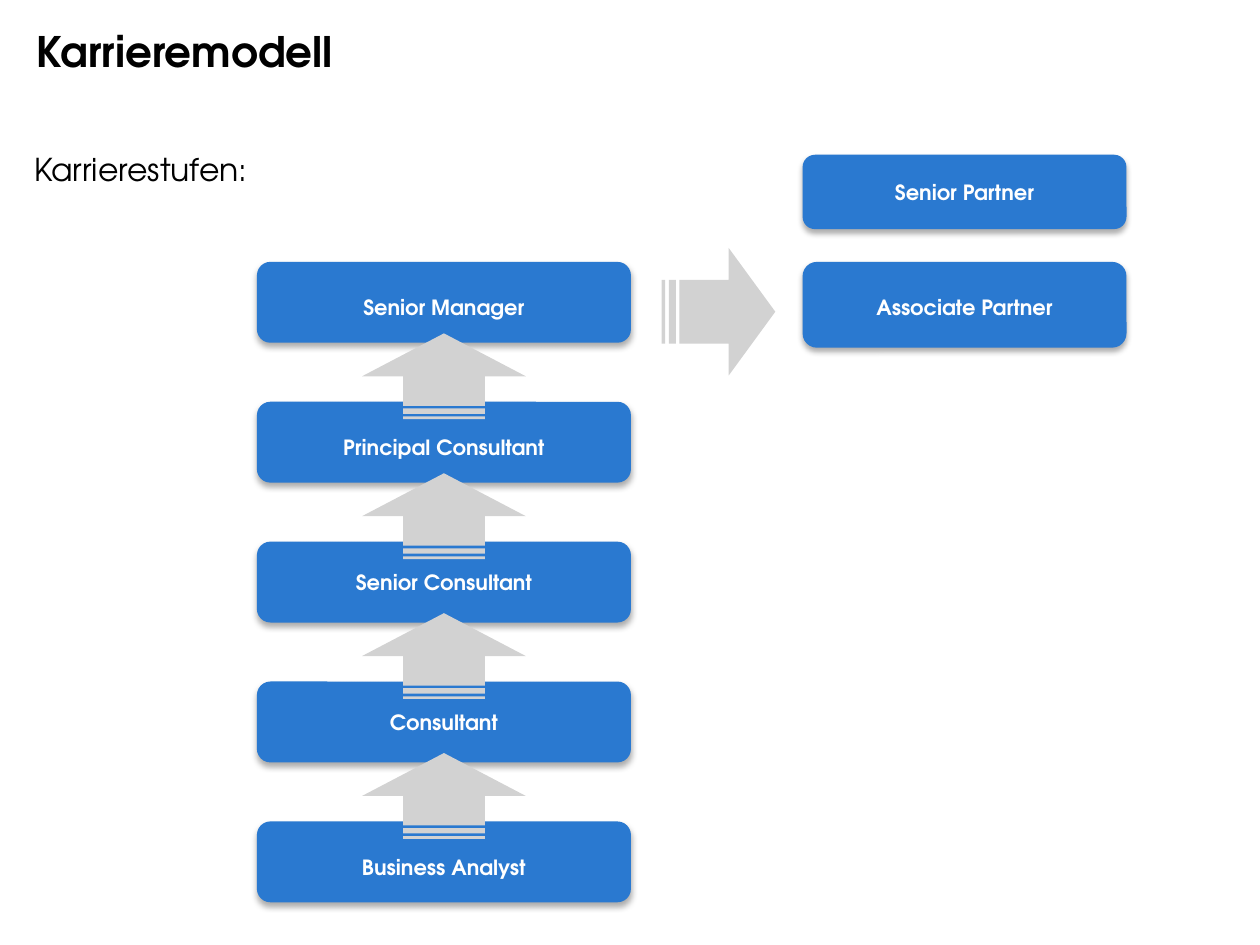
import collections
import dataclasses

import lxml.etree
import pptx
import pptx.dml.color
import pptx.enum.shapes
import pptx.enum.text
import pptx.oxml.ns
import pptx.util

Cm = pptx.util.Cm
Shapes = pptx.enum.shapes.MSO_SHAPE
Align = pptx.enum.text.PP_ALIGN
Anchor = pptx.enum.text.MSO_ANCHOR
Box = collections.namedtuple("Box", "left top width height")


@dataclasses.dataclass(frozen=True)
class Theme:
    """Fonts, colours and type sizes of the slide."""
    font: str = "TeX Gyre Adventor"
    ink: str = "000000"
    level: str = "2A79D0"
    label: str = "FFFFFF"
    arrow: str = "D2D2D2"
    title_size: int = 24
    heading_size: int = 18
    label_size: int = 12


THEME = Theme()
LEVELS = [
    ("Senior Manager", 0.1),
    ("Principal Consultant", 0.1),
    ("Senior Consultant", 0),
    ("Consultant", 0),
    ("Business Analyst", 0.1),
]


def lengths(box):
    """Return the four sides of a box as lengths."""
    return [Cm(value) for value in box]


def write_text(shape, text, size, color=THEME.ink, bold=False,
               align=Align.LEFT, anchor=Anchor.TOP, inset_top=0):
    """Write one formatted paragraph into a shape."""
    frame = shape.text_frame
    frame.word_wrap = True
    frame.auto_size = pptx.enum.text.MSO_AUTO_SIZE.NONE
    frame.vertical_anchor = anchor
    frame.margin_left = frame.margin_right = frame.margin_bottom = 0
    frame.margin_top = Cm(inset_top)
    paragraph = frame.paragraphs[0]
    paragraph.alignment = align
    run = paragraph.add_run()
    run.text = text
    run.font.name = THEME.font
    run.font.size = pptx.util.Pt(size)
    run.font.bold = bold
    run.font.color.rgb = pptx.dml.color.RGBColor.from_string(color)


def add_filled_shape(slide, kind, box, color):
    """Add a preset shape with a plain fill, no line and no shadow."""
    shape = slide.shapes.add_shape(kind, *lengths(box))
    shape.shadow.inherit = False
    shape.fill.solid()
    shape.fill.fore_color.rgb = pptx.dml.color.RGBColor.from_string(color)
    shape.line.fill.background()
    return shape


def add_drop_shadow(shape):
    """Give a shape a soft shadow falling straight down."""
    qn = pptx.oxml.ns.qn
    effects = shape.element.spPr.find(qn("a:effectLst"))
    shadow = lxml.etree.SubElement(
        effects, qn("a:outerShdw"), blurRad=str(pptx.util.Pt(3.5)),
        dist=str(pptx.util.Pt(2.2)), dir="5400000", rotWithShape="0")
    color = lxml.etree.SubElement(shadow, qn("a:srgbClr"), val="000000")
    lxml.etree.SubElement(color, qn("a:alpha"), val="32000")


def add_level(slide, box, text, label_drop=0):
    """Add one career level, its label lowered from the middle by label_drop."""
    shape = add_filled_shape(slide, Shapes.ROUNDED_RECTANGLE, box, THEME.level)
    add_drop_shadow(shape)
    write_text(shape, text, THEME.label_size, THEME.label, bold=True,
               align=Align.CENTER, anchor=Anchor.MIDDLE, inset_top=2 * label_drop)


def add_headings(slide, box):
    """Place the title and the heading below it."""
    title = slide.shapes.title
    title.left, title.top, title.width, title.height = lengths(
        Box(box.left + 0.05, box.top, 19.86, 2.11))
    write_text(title, "Karrieremodell", THEME.title_size, bold=True,
               anchor=Anchor.MIDDLE)
    heading = slide.shapes.add_textbox(
        *lengths(Box(box.left, box.top + 3.05, box.width, box.height - 3.05)))
    write_text(heading, "Karrierestufen:", THEME.heading_size)


def add_ladder(slide, box):
    """Stack the levels in the box and link them with upward arrows."""
    level_height = 1.63
    step = (box.height - level_height) / (len(LEVELS) - 1)
    for index, (text, label_drop) in enumerate(LEVELS):
        level = Box(box.left, box.top + index * step, box.width, level_height)
        add_level(slide, level, text, label_drop)

    length, breadth = 1.73, 3.3
    middle = box.left + box.width / 2
    first_gap = box.top + (step + level_height) / 2 + 0.08
    for index in reversed(range(len(LEVELS) - 1)):
        center = first_gap + index * step
        arrow_box = Box(middle - length / 2, center - breadth / 2, length, breadth)
        arrow = add_filled_shape(slide, Shapes.STRIPED_RIGHT_ARROW, arrow_box, THEME.arrow)
        arrow.rotation = 270


def add_partner_track(slide, box):
    """Place the arrow to the partner levels and the two levels."""
    arrow = add_filled_shape(slide, Shapes.STRIPED_RIGHT_ARROW,
                             Box(box.left, box.top + 1.88, 2.29, 2.57), THEME.arrow)
    arrow.adjustments[1] = 0.41
    level_left, level_width = box.left + 2.84, box.width - 2.84
    add_level(slide, Box(level_left, box.top + 2.16, level_width, 1.73),
              "Associate Partner", 0.05)
    add_level(slide, Box(level_left, box.top, level_width, 1.5), "Senior Partner")


def main():
    """Build the slide and save it."""
    presentation = pptx.Presentation()
    presentation.slide_width = Cm(25.4)
    presentation.slide_height = Cm(19.05)
    slide = presentation.slides.add_slide(presentation.slide_layouts[5])
    add_headings(slide, Box(0.69, -0.03, 23.44, 18.21))
    add_ladder(slide, Box(5.18, 5.28, 7.54, 12.91))
    add_partner_track(slide, Box(13.34, 3.12, 9.37, 4.45))
    presentation.save("out.pptx")


if __name__ == "__main__":
    main()
